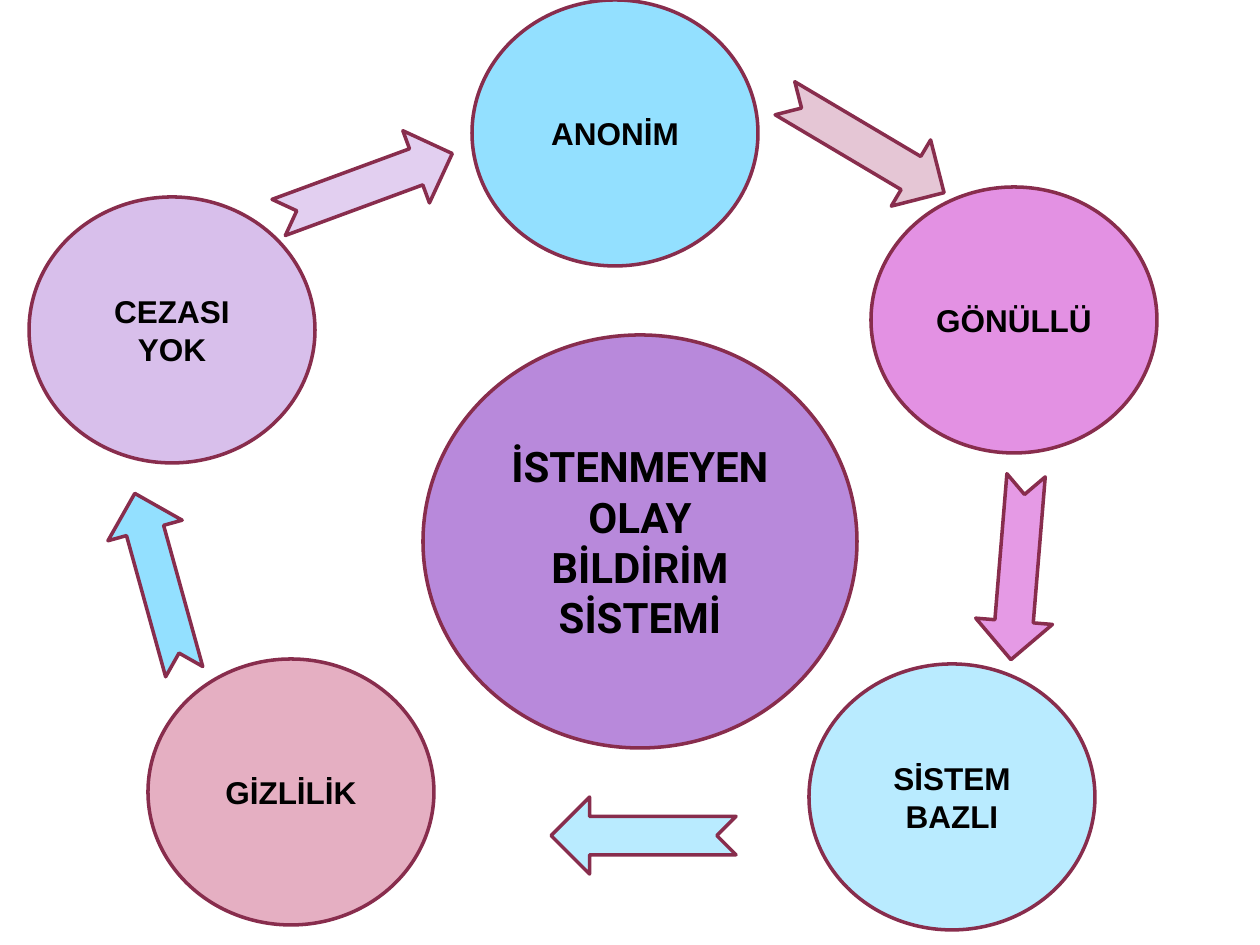
import pptx
import pptx.dml.color
import pptx.enum.shapes
import pptx.enum.text
import pptx.oxml.ns
import pptx.util
from lxml import etree

PIXELS_PER_INCH = 126
COLORS = {
    "outline": "882D4D",
    "text": "000000",
    "purple": "B889DB",
    "rose": "E5AFC2",
    "pale_rose": "E5C6D5",
    "blue": "93E0FF",
    "pale_blue": "B9EBFF",
    "lilac": "D8BFEB",
    "pink": "E391E3",
}
CIRCLE_SIZE = (286, 266)
ARROW_SIZE = (185, 77)


def px(length):
    return round(length * pptx.util.Inches(1) / PIXELS_PER_INCH)


def rgb(name):
    return pptx.dml.color.RGBColor.from_string(COLORS[name])


class CycleSlide:
    """Holds the style and the current slide."""

    label_format = {"name": "Arial", "size": pptx.util.Pt(18), "bold": True}
    title_format = {"name": "Roboto", "size": pptx.util.Pt(24), "bold": True}
    line_width = pptx.util.Pt(2)

    def __init__(self, presentation):
        self.slide = presentation.slides.add_slide(presentation.slide_layouts[6])

    def add_outlined(self, kind, position, size, color):
        shape = self.slide.shapes.add_shape(kind, *map(px, position + size))
        shape.shadow.inherit = False
        shape.fill.solid()
        shape.fill.fore_color.rgb = rgb(color)
        shape.line.color.rgb = rgb("outline")
        shape.line.width = self.line_width
        return shape

    def add_circle(self, text, position, color, size=CIRCLE_SIZE, text_format=None):
        kind = pptx.enum.shapes.MSO_SHAPE.OVAL
        shape = self.add_outlined(kind, position, size, color)
        frame = shape.text_frame
        frame.word_wrap = True
        frame.vertical_anchor = pptx.enum.text.MSO_ANCHOR.MIDDLE
        paragraph = frame.paragraphs[0]
        paragraph.alignment = pptx.enum.text.PP_ALIGN.CENTER
        run = paragraph.add_run()
        run.text = text
        for name, value in (text_format or self.label_format).items():
            setattr(run.font, name, value)
        run.font.color.rgb = rgb("text")

    def add_arrow(self, position, rotation, color, opacity=100):
        kind = pptx.enum.shapes.MSO_SHAPE.NOTCHED_RIGHT_ARROW
        shape = self.add_outlined(kind, position, ARROW_SIZE, color)
        shape.rotation = rotation
        if opacity < 100:
            fill_color = shape.element.spPr.find(
                "/".join(map(pptx.oxml.ns.qn, ("a:solidFill", "a:srgbClr"))))
            alpha = etree.SubElement(fill_color, pptx.oxml.ns.qn("a:alpha"))
            alpha.set("val", str(opacity * 1000))


def main():
    presentation = pptx.Presentation()
    presentation.slide_width = pptx.util.Inches(10)
    presentation.slide_height = pptx.util.Inches(7.5)
    cycle = CycleSlide(presentation)

    # Central topic
    cycle.add_circle("İSTENMEYEN OLAY BİLDİRİM SİSTEMİ", (423, 335), "purple",
                     size=(434, 413), text_format=cycle.title_format)

    # Surrounding principles
    for text, position, color in (
        ("GİZLİLİK", (148, 659), "rose"),
        ("ANONİM", (472, 0), "blue"),
        ("CEZASI YOK", (29, 197), "lilac"),
        ("GÖNÜLLÜ", (871, 187), "pink"),
        ("SİSTEM BAZLI", (809, 664), "pale_blue"),
    ):
        cycle.add_circle(text, position, color)

    # Clockwise arrows between the principles
    for position, rotation, color, opacity in (
        ((772, 107), 30.7, "pale_rose", 100),
        ((273, 147), 339.8, "lilac", 74),
        ((67, 544), 254.5, "blue", 100),
        ((551, 797), 180, "pale_blue", 100),
        ((926, 529), 94.7, "pink", 91),
    ):
        cycle.add_arrow(position, rotation, color, opacity)

    presentation.save("out.pptx")


if __name__ == "__main__":
    main()
